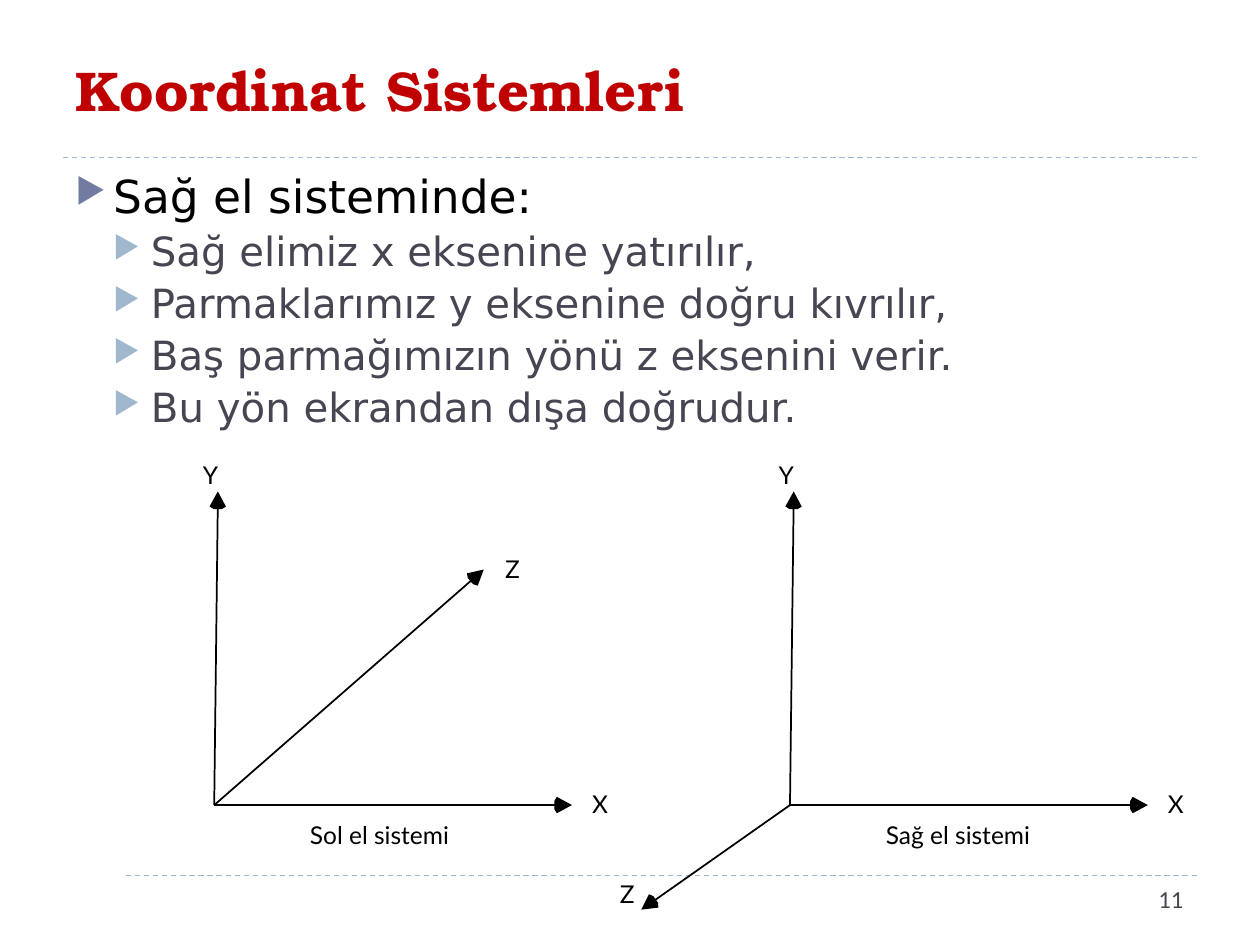
import dataclasses
import math

import pptx
import pptx.dml.color
import pptx.enum.dml
import pptx.enum.shapes
import pptx.enum.text
import pptx.oxml
import pptx.oxml.ns
import pptx.util

Inches = pptx.util.Inches
Pt = pptx.util.Pt
Align = pptx.enum.text.PP_ALIGN
Anchor = pptx.enum.text.MSO_ANCHOR


@dataclasses.dataclass
class Theme:
    title_font: str = "TeX Gyre Bonum"
    body_font: str = "DejaVu Sans"
    label_font: str = "Lato"
    number_font: str = "Calibri"
    title_size: int = 32
    body_sizes: tuple = (26, 23)
    label_size: int = 14
    title_color: str = "C00000"
    ink: str = "000000"
    muted: str = "464653"
    paper: str = "FFFFFF"
    rule: str = "9FB8CD"
    bullet_colors: tuple = ("727CA3", "9FB8CD")


class SlideBuilder:
    """Draws styled elements on the current slide."""

    def __init__(self, slide, theme):
        self.slide = slide
        self.theme = theme

    def color(self, value):
        return pptx.dml.color.RGBColor.from_string(value)

    def style_text(self, para, font, size, color, bold=False):
        for span in para.runs:
            span.font.name = font
            span.font.size = Pt(size)
            span.font.bold = bold
            span.font.color.rgb = self.color(color)

    def title(self, text, left, top, width, height):
        box = self.slide.shapes.title
        box.left, box.top = Inches(left), Inches(top)
        box.width, box.height = Inches(width), Inches(height)
        frame = box.text_frame
        frame.text = text
        frame.auto_size = pptx.enum.text.MSO_AUTO_SIZE.NONE
        frame.vertical_anchor = Anchor.MIDDLE
        para = frame.paragraphs[0]
        para.alignment = Align.LEFT
        self.style_text(para, self.theme.title_font, self.theme.title_size,
                        self.theme.title_color, bold=True)

    def line(self, start, end, color, width, dashed=False):
        line = self.slide.shapes.add_connector(
            pptx.enum.shapes.MSO_CONNECTOR.STRAIGHT,
            *(Inches(value) for value in (*start, *end)))
        line.line.color.rgb = self.color(color)
        line.line.width = Pt(width)
        if dashed:
            line.line.dash_style = pptx.enum.dml.MSO_LINE.DASH
        properties = line._element.spPr
        properties.append(properties.makeelement(pptx.oxml.ns.qn("a:effectLst"), {}))

    def panel(self, left, top, width, height):
        panel = self.slide.shapes.add_shape(
            pptx.enum.shapes.MSO_SHAPE.RECTANGLE,
            Inches(left), Inches(top), Inches(width), Inches(height))
        panel.shadow.inherit = False
        panel.fill.solid()
        panel.fill.fore_color.rgb = self.color(self.theme.paper)
        panel.line.fill.background()
        return panel

    def page_number(self, text, left, top, width, height):
        frame = self.panel(left, top, width, height).text_frame
        frame.text = text
        frame.vertical_anchor = Anchor.TOP
        para = frame.paragraphs[0]
        para.alignment = Align.RIGHT
        self.style_text(para, self.theme.number_font, self.theme.label_size,
                        self.theme.muted)

    def label(self, text, left, top, width, height=0.24):
        box = self.slide.shapes.add_textbox(
            Inches(left), Inches(top), Inches(width), Inches(height))
        frame = box.text_frame
        frame.margin_left = frame.margin_right = 0
        frame.margin_top = frame.margin_bottom = 0
        frame.word_wrap = False
        frame.text = text
        self.style_text(frame.paragraphs[0], self.theme.label_font,
                        self.theme.label_size, self.theme.ink)

    def bullets(self, items, left, top, width, height):
        box = self.slide.shapes.add_textbox(
            Inches(left), Inches(top), Inches(width), Inches(height))
        frame = box.text_frame
        frame.word_wrap = True
        for index, (level, text) in enumerate(items):
            para = frame.add_paragraph() if index else frame.paragraphs[0]
            para.text = text
            para.level = level
            para.line_spacing = 0.9
            para.space_before = Pt(6 - level)
            self.style_text(para, self.theme.body_font,
                            self.theme.body_sizes[level],
                            (self.theme.ink, self.theme.muted)[level])
            self.bullet(para, level)

    def bullet(self, para, level):
        properties = para._p.get_or_add_pPr()
        properties.set("marL", str(Inches(0.3 * (level + 1))))
        properties.set("indent", str(Inches(-0.3)))
        namespace = pptx.oxml.ns.nsdecls("a")
        for xml in (
            f'<a:buClr {namespace}><a:srgbClr val="{self.theme.bullet_colors[level]}"/></a:buClr>',
            f'<a:buSzPct {namespace} val="76000"/>',
            f'<a:buChar {namespace} char="▶"/>',
        ):
            properties.append(pptx.oxml.parse_xml(xml))

    def arrow(self, start, tip, length=0.14, half_width=0.065):
        """Draws an axis with a solid head whose back bulges slightly."""
        angle = math.atan2(tip[1] - start[1], tip[0] - start[0])

        def head_point(back, side):
            return (tip[0] - back * math.cos(angle) - side * math.sin(angle),
                    tip[1] - back * math.sin(angle) + side * math.cos(angle))

        self.line(start, head_point(length - 0.02, 0), self.theme.ink, 1)
        outline = [tip, head_point(length - 0.02, half_width),
                   head_point(length, half_width / 2),
                   head_point(length, -half_width / 2),
                   head_point(length - 0.02, -half_width)]
        points = [(Inches(x), Inches(y)) for x, y in outline]
        builder = self.slide.shapes.build_freeform(*points[0])
        builder.add_line_segments(points[1:], close=True)
        head = builder.convert_to_shape()
        head.shadow.inherit = False
        head.fill.solid()
        head.fill.fore_color.rgb = self.color(self.theme.ink)
        head.line.fill.background()

    def axes(self, origin, z_tip, z_label, caption, caption_width):
        """Draws one coordinate system; tips and labels are offsets from origin."""
        x, y = origin
        for name, tip, spot in (
            ("Z", z_tip, z_label),
            ("Y", (0.03, -2.49), (-0.09, -2.74)),
            ("X", (2.84, 0), (3, -0.13)),
        ):
            self.arrow(origin, (x + tip[0], y + tip[1]))
            self.label(name, x + spot[0], y + spot[1], 0.14)
        self.label(caption, x + 0.76, y + 0.12, caption_width)


def main():
    deck = pptx.Presentation()
    deck.slide_width, deck.slide_height = Inches(10), Inches(7.5)
    theme = Theme()
    page = SlideBuilder(deck.slides.add_slide(deck.slide_layouts[5]), theme)

    # Dashed rules, with the lower one cleared at the left corner
    for height in (1.25, 6.95):
        page.line((0.5, height), (9.5, height), theme.rule, 0.75, dashed=True)
    page.panel(0.35, 6.82, 0.63, 0.63)

    # Title, page number and bullet list
    page.title("Koordinat Sistemleri", 0.5, 0.17, 9, 1.08)
    page.page_number("11", 7.16, 6.97, 2.33, 0.4)
    page.bullets([
        (0, "Sağ el sisteminde:"),
        (1, "Sağ elimiz x eksenine yatırılır,"),
        (1, "Parmaklarımız y eksenine doğru kıvrılır,"),
        (1, "Baş parmağımızın yönü z eksenini verir."),
        (1, "Bu yön ekrandan dışa doğrudur."),
    ], 0.5, 1.33, 9, 5.4)

    # Left-handed and right-handed systems
    page.axes((1.7, 6.39), (2.14, -1.87), (2.31, -1.99), "Sol el sistemi", 1.16)
    page.axes((6.27, 6.39), (-1.18, 0.83), (-1.35, 0.59), "Sağ el sistemi", 1.22)

    deck.save("out.pptx")


if __name__ == "__main__":
    main()
